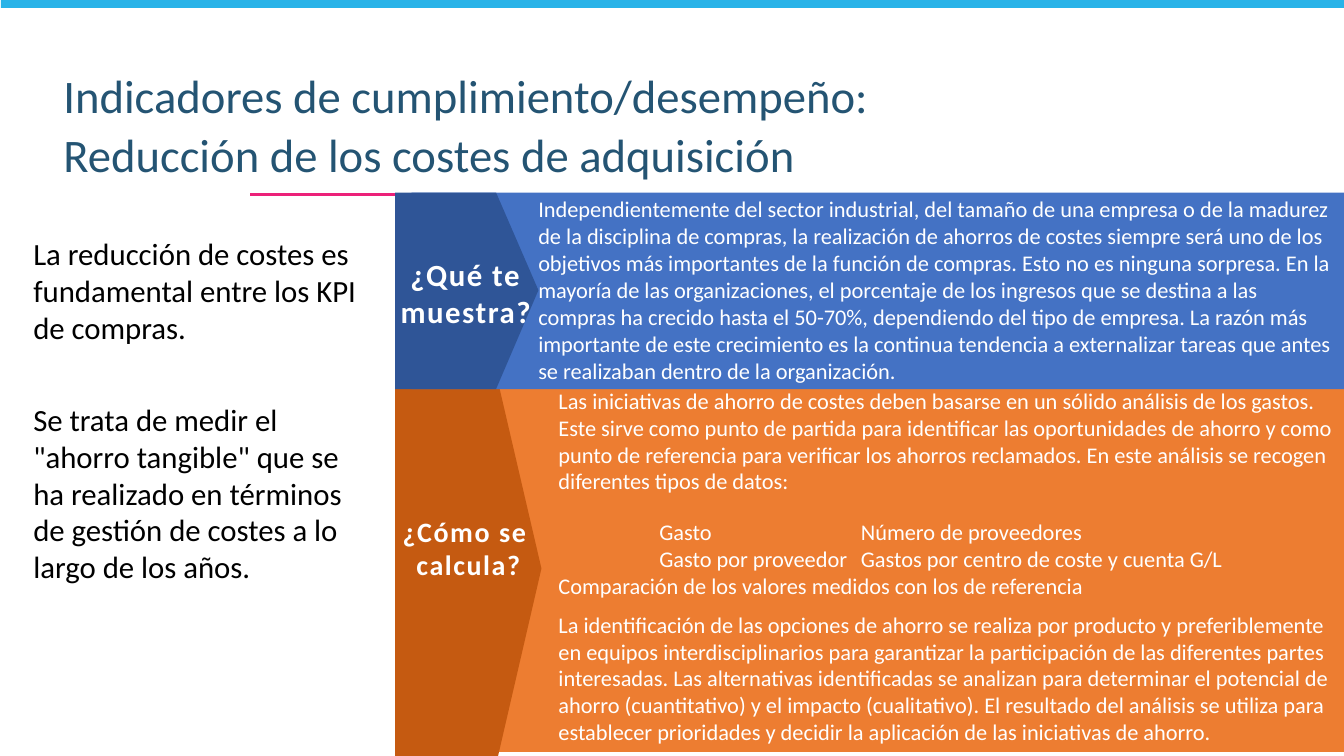
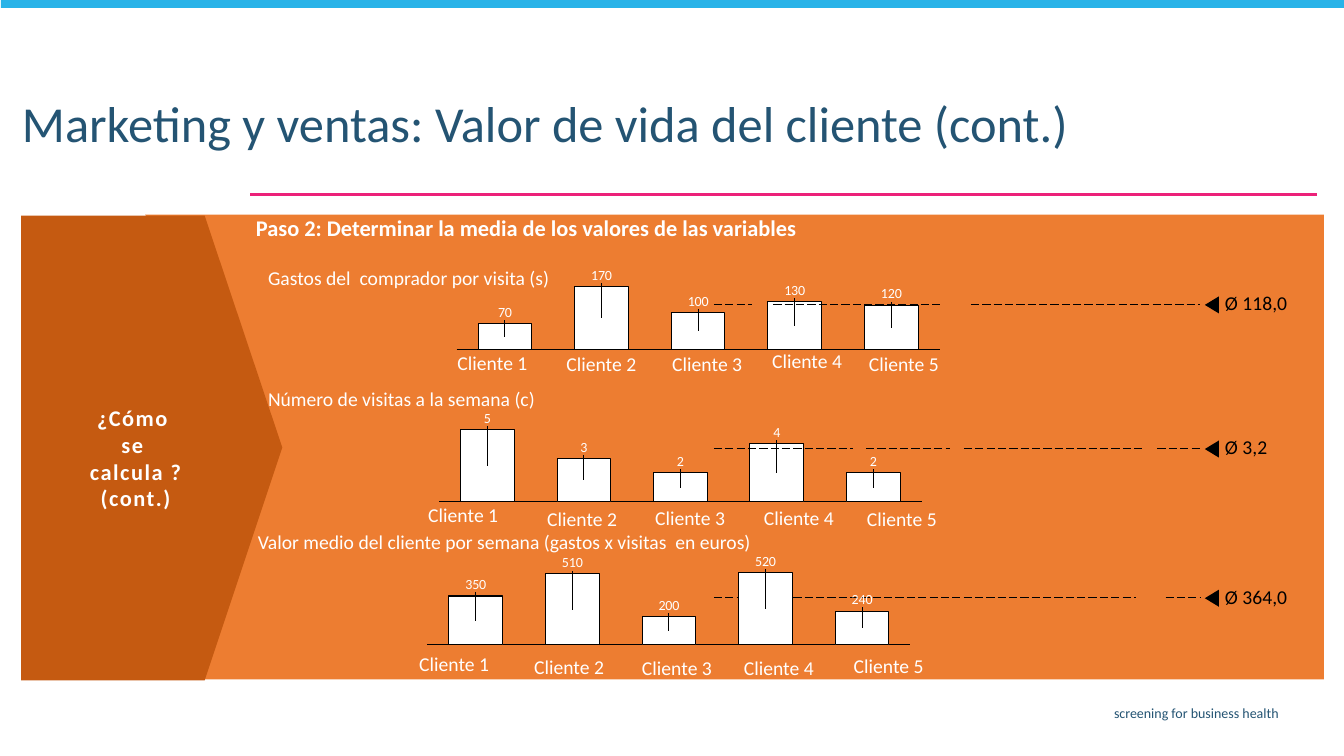
import dataclasses

import lxml.etree
import pptx
import pptx.chart.data
import pptx.dml.color
import pptx.enum.chart
import pptx.enum.dml
import pptx.enum.shapes
import pptx.enum.text
import pptx.oxml.ns
import pptx.util

PX = 9144
FONT = "Calibri"
COLORS = {
    "title": "245473",
    "band": "29B3E8",
    "rule": "EC2179",
    "blue": "4472C4",
    "dark_blue": "2F5597",
    "orange": "ED7D31",
    "dark_orange": "C55A11",
    "white": "FFFFFF",
    "black": "000000",
}
ALIGN = pptx.enum.text.PP_ALIGN
ANCHOR = pptx.enum.text.MSO_ANCHOR
SHAPE = pptx.enum.shapes.MSO_SHAPE
qn = pptx.oxml.ns.qn


@dataclasses.dataclass
class TextStyle:
    size: float
    color: str = "white"
    bold: bool = False
    tracking: int = 0
    align: ALIGN = ALIGN.LEFT
    anchor: ANCHOR = ANCHOR.TOP
    line_spacing: float = 1.0
    inset: tuple = (10, 5)


BODY = TextStyle(16)
STEP = TextStyle(16, bold=True)
INTRO = TextStyle(22, "black", inset=(9, 4))
FOOTER = TextStyle(10, "title", align=ALIGN.RIGHT)
CHART_TITLE = TextStyle(14)
CLIENT = TextStyle(14, align=ALIGN.CENTER, line_spacing=0.9, inset=(0, 0))
AVERAGE = TextStyle(14, "black", anchor=ANCHOR.MIDDLE, line_spacing=0.9, inset=(0, 0))


def title_style(size, line_spacing):
    return TextStyle(size, "title", line_spacing=line_spacing)


def question_style(size):
    return TextStyle(size, bold=True, tracking=110, align=ALIGN.CENTER,
                     anchor=ANCHOR.MIDDLE, inset=(0, 0))


@dataclasses.dataclass
class ClientRow:
    title: str
    title_at: tuple
    values: tuple
    chart_box: tuple
    plot: tuple
    client_places: tuple
    average: str
    average_y: int
    dashes: tuple
    chart_on_top: bool = False


CLIENT_ROWS = (
    ClientRow("Gastos del  comprador por visita (s)", (256, 259),
              (70, 170, 100, 130, 120), (443, 262, 499, 94), (0.02, 0.24, 0.96, 0.66),
              ((452, 351), (560, 352), (665, 352), (764, 349), (860, 352)),
              "Ø 118,0", 302, ((708, 746), (767, 934), (963, 1190))),
    ClientRow("Número de visitas a la semana (c)", (256, 379),
              (5, 3, 2, 4, 2), (435, 399, 499, 104), (0, 0.26, 0.96, 0.69),
              ((423, 502), (541, 506), (648, 505), (756, 505), (858, 506)),
              "Ø 3,2", 445, ((708, 846), (859, 942), (956, 1135), (1148, 1190))),
    ClientRow("Valor medio del cliente por semana (gastos x visitas  en euros)", (246, 521),
              (350, 510, 200, 520, 240), (414, 545, 499, 104), (0.02, 0.22, 0.96, 0.69),
              ((414, 649), (528, 652), (635, 653), (736, 653), (845, 651)),
              "Ø 364,0", 593, ((708, 1127), (1156, 1190)), chart_on_top=True),
)


def emu(*lengths):
    return [pptx.util.Emu(length * PX) for length in lengths]


def rgb(name):
    return pptx.dml.color.RGBColor.from_string(COLORS[name])


def add_text(slide, box, paragraphs, style, tabs=()):
    frame = slide.shapes.add_textbox(*emu(*box)).text_frame
    frame.word_wrap = True
    frame.vertical_anchor = style.anchor
    frame.margin_left, frame.margin_top = emu(*style.inset)
    frame.margin_right, frame.margin_bottom = emu(*style.inset)
    for index, (text, space_before) in enumerate(paragraphs):
        paragraph = frame.add_paragraph() if index else frame.paragraphs[0]
        paragraph.alignment = style.align
        paragraph.line_spacing = style.line_spacing
        paragraph.space_before = pptx.util.Pt(space_before)
        if tabs and "\t" in text:
            tab_list = lxml.etree.SubElement(paragraph._p.get_or_add_pPr(), qn("a:tabLst"))
            for position in tabs:
                lxml.etree.SubElement(tab_list, qn("a:tab"), pos=str(position * PX), algn="l")
        run = paragraph.add_run()
        run.text = text
        run.font.name = FONT
        run.font.size = pptx.util.Pt(style.size)
        run.font.bold = style.bold
        run.font.color.rgb = rgb(style.color)
        if style.tracking:
            run.font._element.set("spc", str(style.tracking))


def paint(shape, color):
    shape.shadow.inherit = False
    shape.fill.solid()
    shape.fill.fore_color.rgb = rgb(color)
    shape.line.fill.background()


def add_preset(slide, kind, box, color):
    shape = slide.shapes.add_shape(kind, *emu(*box))
    paint(shape, color)
    return shape


def add_outline(slide, points, color):
    builder = slide.shapes.build_freeform(*points[0], scale=float(PX))
    builder.add_line_segments(points[1:], close=True)
    paint(builder.convert_to_shape(), color)


def add_panel(slide, left, top, right, bottom, notch, color):
    middle = (top + bottom) // 2
    add_outline(slide, [(left, top), (notch, middle), (left, bottom),
                        (right, bottom), (right, top)], color)


def add_pointer(slide, left, top, shoulder, bottom, tip, color):
    middle = (top + bottom) // 2
    add_outline(slide, [(left, top), (shoulder, top), (tip, middle),
                        (shoulder, bottom), (left, bottom)], color)


def add_horizontal_line(slide, start, end, y, color, width, dash=None):
    line = slide.shapes.add_connector(pptx.enum.shapes.MSO_CONNECTOR.STRAIGHT,
                                      *emu(start, y, end, y))
    line.line.color.rgb = rgb(color)
    line.line.width = pptx.util.Pt(width)
    if dash:
        line.line.dash_style = dash
    lxml.etree.SubElement(line._element.spPr, qn("a:effectLst"))


def manual_layout(**settings):
    layout = lxml.etree.Element(qn("c:layout"))
    manual = lxml.etree.SubElement(layout, qn("c:manualLayout"))
    for name, value in settings.items():
        lxml.etree.SubElement(manual, qn("c:" + name), val=str(value))
    return layout


def add_bar_chart(slide, box, values, plot_box):
    data = pptx.chart.data.CategoryChartData()
    data.categories = [str(number) for number in range(1, len(values) + 1)]
    data.add_series("Series 1", values)
    chart = slide.shapes.add_chart(pptx.enum.chart.XL_CHART_TYPE.COLUMN_STACKED,
                                   *emu(*box), data).chart
    chart.has_legend = False
    chart.has_title = False
    chart.font.name = FONT
    chart.font.size = pptx.util.Pt(10)
    chart.font.color.rgb = rgb("white")

    category_axis = chart.category_axis
    category_axis.tick_label_position = pptx.enum.chart.XL_TICK_LABEL_POSITION.NONE
    category_axis.major_tick_mark = pptx.enum.chart.XL_TICK_MARK.NONE
    category_axis.format.line.color.rgb = rgb("black")
    category_axis.format.line.width = pptx.util.Pt(0.75)
    value_axis = chart.value_axis
    value_axis.minimum_scale = 0
    value_axis.maximum_scale = max(values)
    value_axis.has_major_gridlines = False
    value_axis.visible = False

    plot = chart.plots[0]
    plot.gap_width = 80
    plot.overlap = 100
    plot.vary_by_categories = False
    series = plot.series[0]
    series.format.fill.solid()
    series.format.fill.fore_color.rgb = rgb("white")
    series.format.line.color.rgb = rgb("black")
    series.format.line.width = pptx.util.Pt(0.75)

    x, y, width, height = plot_box
    plot_area = chart._chartSpace.find(".//" + qn("c:plotArea"))
    for layout in plot_area.findall(qn("c:layout")):
        plot_area.remove(layout)
    plot_area.insert(0, manual_layout(layoutTarget="inner", xMode="edge", yMode="edge",
                                      x=x, y=y, w=width, h=height))
    for index in range(len(values)):
        label = series.points[index].data_label
        label.position = pptx.enum.chart.XL_LABEL_POSITION.CENTER
    for value, label in zip(values, series._element.iter(qn("c:dLbl"))):
        rise = height * value / max(values) / 2 + 11 / box[3]
        label.insert(1, manual_layout(x=0, y=round(-rise, 2)))


def add_average(slide, row):
    for start, end in row.dashes:
        add_horizontal_line(slide, start, end, row.average_y, "black", 0.75,
                            pptx.enum.dml.MSO_LINE.LONG_DASH)
    arrow = add_preset(slide, SHAPE.LEFT_ARROW, (1195, row.average_y - 8, 14, 17), "black")
    arrow.adjustments[0] = 1
    arrow.adjustments[1] = 1
    add_text(slide, (1215, row.average_y - 8, 80, 16), [(row.average, 0)], AVERAGE)


def add_client_row(slide, row):
    if row.chart_on_top:
        add_average(slide, row)
    add_bar_chart(slide, row.chart_box, row.values, row.plot)
    if not row.chart_on_top:
        add_average(slide, row)
    add_text(slide, (*row.title_at, 689, 34), [(row.title, 0)], CHART_TITLE)
    for number, (x, y) in enumerate(row.client_places, 1):
        add_text(slide, (x, y, 73, 16), [(f"Cliente {number}", 0)], CLIENT)


def add_base_slide(presentation):
    slide = presentation.slides.add_slide(presentation.slide_layouts[6])
    add_horizontal_line(slide, 248, 1306, 193, "rule", 1.5)
    add_preset(slide, SHAPE.RECTANGLE, (1, -2, 1334, 10), "band")
    return slide


def build_cost_slide(presentation):
    slide = add_base_slide(presentation)
    add_text(slide, (53, 72, 994, 113), [
        ("Indicadores de cumplimiento/desempeño:", 0),
        ("Reducción de los costes de adquisición", 10),
    ], title_style(33.3, 0.8))
    add_text(slide, (24, 229, 342, 359), [
        ("La reducción de costes es fundamental entre los KPI de compras.", 0),
        ("Se trata de medir el \"ahorro tangible\" que se ha realizado en términos "
         "de gestión de costes a lo largo de los años.", 39),
    ], INTRO)
    add_panel(slide, 436, 386, 1333, 746, 533, "orange")
    add_pointer(slide, 392, 379, 494, 750, 537, "dark_orange")
    add_panel(slide, 408, 191, 1333, 386, 507, "blue")
    add_pointer(slide, 392, 191, 492, 386, 534, "dark_blue")
    add_text(slide, (524, 189, 809, 199), [
        ("Independientemente del sector industrial, del tamaño de una empresa o de la madurez "
         "de la disciplina de compras, la realización de ahorros de costes siempre será uno de "
         "los objetivos más importantes de la función de compras. Esto no es ninguna sorpresa. "
         "En la mayoría de las organizaciones, el porcentaje de los ingresos que se destina a "
         "las compras ha crecido hasta el 50-70%, dependiendo del tipo de empresa. La razón más "
         "importante de este crecimiento es la continua tendencia a externalizar tareas que "
         "antes se realizaban dentro de la organización.", 0),
    ], BODY)
    add_text(slide, (544, 379, 789, 369), [
        ("Las iniciativas de ahorro de costes deben basarse en un sólido análisis de los gastos. "
         "Este sirve como punto de partida para identificar las oportunidades de ahorro y como "
         "punto de referencia para verificar los ahorros reclamados. En este análisis se "
         "recogen diferentes tipos de datos:", 0),
        ("\tGasto\tNúmero de proveedores", 17),
        ("\tGasto por proveedor\tGastos por centro de coste y cuenta G/L", 0),
        ("Comparación de los valores medidos con los de referencia", 0),
        ("La identificación de las opciones de ahorro se realiza por producto y preferiblemente "
         "en equipos interdisciplinarios para garantizar la participación de las diferentes "
         "partes interesadas. Las alternativas identificadas se analizan para determinar el "
         "potencial de ahorro (cuantitativo) y el impacto (cualitativo). El resultado del "
         "análisis se utiliza para establecer prioridades y decidir la aplicación de las "
         "iniciativas de ahorro.", 8.5),
    ], BODY, tabs=(100, 300))
    add_text(slide, (352, 510, 225, 67), [("¿Cómo se ", 0), ("calcula?", 0)],
             question_style(20))
    add_text(slide, (382, 253, 160, 74), [("¿Qué te muestra?", 0)], question_style(22))


def build_client_value_slide(presentation):
    slide = add_base_slide(presentation)
    add_text(slide, (365, 694, 913, 29), [("screening for business health", 0)], FOOTER)
    add_text(slide, (12, 93, 1233, 116),
             [("Marketing y ventas: Valor de vida del cliente (cont.)", 0)],
             title_style(36, 0.9))
    add_panel(slide, 144, 213, 1313, 674, 269, "orange")
    add_pointer(slide, 21, 214, 203, 675, 280, "dark_orange")
    add_text(slide, (75, 400, 119, 108),
             [("¿Cómo ", 0), ("se ", 0), ("calcula ?", 0), ("(cont.)", 0)],
             question_style(16))
    add_text(slide, (244, 208, 1029, 37),
             [("Paso 2: Determinar la media de los valores de las variables", 0)], STEP)
    for row in CLIENT_ROWS:
        add_client_row(slide, row)


def main():
    presentation = pptx.Presentation()
    presentation.slide_width, presentation.slide_height = emu(1333, 750)
    build_cost_slide(presentation)
    build_client_value_slide(presentation)
    presentation.save("out.pptx")


if __name__ == "__main__":
    main()
